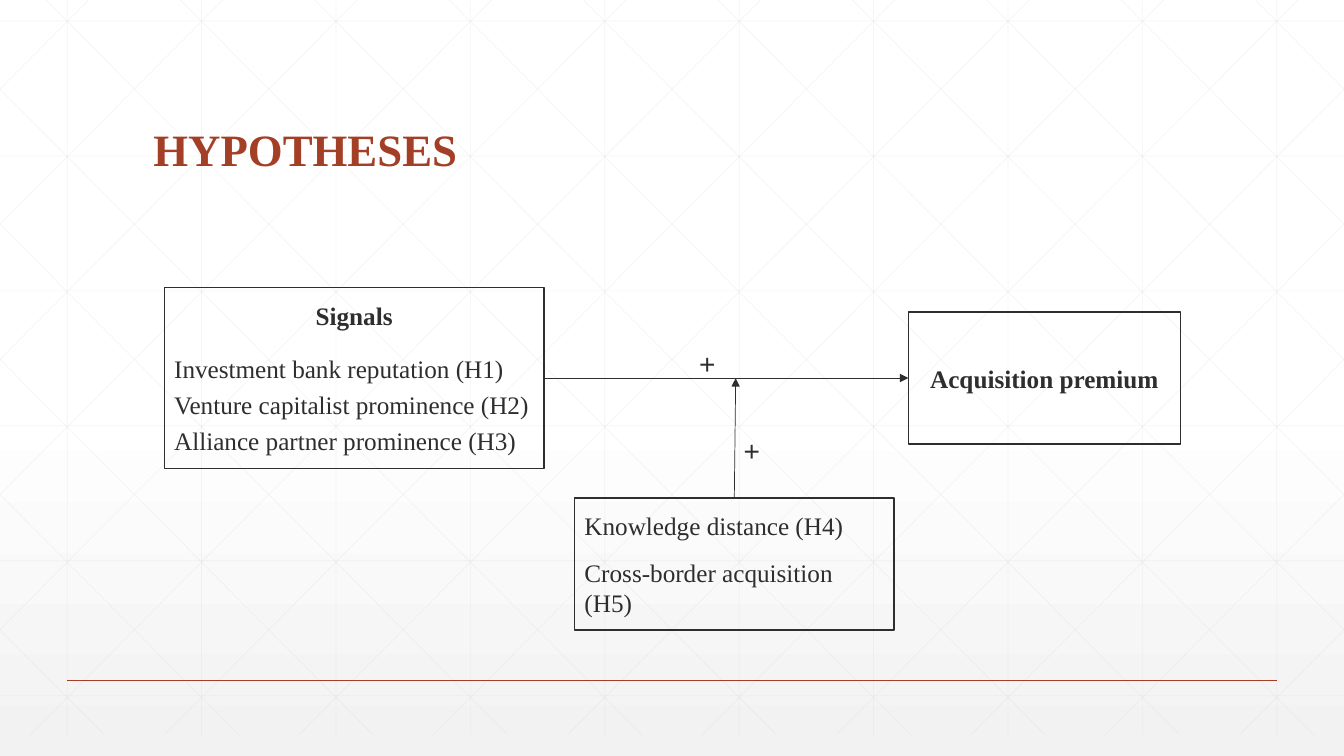
from copy import deepcopy

from lxml.etree import SubElement
from pptx import Presentation
from pptx.dml.color import RGBColor
from pptx.enum.shapes import MSO_CONNECTOR, MSO_SHAPE
from pptx.enum.text import MSO_ANCHOR, PP_ALIGN
from pptx.oxml.ns import qn
from pptx.util import Cm, Pt

INK = RGBColor(0x2D, 0x2E, 0x2D)
RUST = RGBColor(0xA4, 0x3F, 0x27)
GRID = RGBColor(0xD9, 0xD9, 0xD9)
WHITE = RGBColor(0xFF, 0xFF, 0xFF)
MIST = RGBColor(0xF2, 0xF2, 0xF2)

SERIF = "Times New Roman"
WIDTH, HEIGHT = 33.87, 19.05
PITCH = WIDTH / 10
GRID_TOP, GRID_BOTTOM = -0.53, 18.52
DIAGONAL_START, DIAGONAL_RUN = 0.63, 18.94


def set_background(slide):
    fill = slide.background.fill
    fill.gradient()
    fill.gradient_angle = 270
    stop_list = slide.element.find(".//" + qn("a:gsLst"))
    stop_list.insert(0, deepcopy(stop_list[0]))
    for stop, position, color in zip(fill.gradient_stops, (0, 0.53, 1), (WHITE, WHITE, MIST)):
        stop.position = position
        stop.color.rgb = color


def add_line(shapes, start, end, color, weight, alpha=None, arrow=False):
    line = shapes.add_connector(MSO_CONNECTOR.STRAIGHT, *map(Cm, start + end))
    line.line.color.rgb = color
    line.line.width = Pt(weight)
    properties = line.element.spPr
    SubElement(properties, qn("a:effectLst"))
    if alpha is not None:
        SubElement(properties.find(".//" + qn("a:srgbClr")), qn("a:alpha"), val=str(alpha * 1000))
    if arrow:
        SubElement(properties.find(qn("a:ln")), qn("a:tailEnd"), type="triangle")
    return line


def clipped_diagonal(top_x):
    """Ends of a falling grid line, cut at the slide's left and right edges."""
    slope = (GRID_BOTTOM - GRID_TOP) / DIAGONAL_RUN
    left, right = max(top_x, 0), min(top_x + DIAGONAL_RUN, WIDTH)
    return [(x, GRID_TOP + (x - top_x) * slope) for x in (left, right)]


def add_grid(slide):
    shapes = slide.shapes.add_group_shape().shapes
    columns = [PITCH * (i + 0.5) for i in range(10)]
    rows = [0.53 + 3.4 * i for i in range(6)]
    lines = [((x, GRID_TOP), (x, GRID_BOTTOM)) for x in columns]
    lines += [((0, y), (WIDTH, y)) for y in rows]
    falling = [clipped_diagonal(DIAGONAL_START + PITCH * i) for i in range(-5, 10)]
    lines += falling
    lines += [[(WIDTH - x, y) for x, y in ends] for ends in falling]
    for start, end in lines:
        add_line(shapes, start, end, GRID, 0.5, alpha=25)


def format_text(paragraph, size, color=INK, font=SERIF, bold=False):
    for run in paragraph.runs:
        run.font.name = font
        run.font.size = Pt(size)
        run.font.bold = bold
        run.font.color.rgb = color


def set_title(slide, text):
    title = slide.shapes.title
    title.left, title.top, title.width, title.height = map(Cm, (3.61, 1.4, 26.67, 3.18))
    frame = title.text_frame
    frame.text = text
    frame.vertical_anchor = MSO_ANCHOR.BOTTOM
    heading = frame.paragraphs[0]
    heading.alignment = PP_ALIGN.LEFT
    heading.line_spacing = 0.9
    format_text(heading, 32, RUST, bold=True)
    # The title belongs in front of the grid.
    title.element.getparent().append(title.element)


def add_box(slide, bounds, items, heading=None, spacing=1.0):
    box = slide.shapes.add_shape(MSO_SHAPE.RECTANGLE, *map(Cm, bounds))
    box.shadow.inherit = False
    box.fill.background()
    box.line.color.rgb = INK
    box.line.width = Pt(1)
    frame = box.text_frame
    frame.word_wrap = True
    frame.vertical_anchor = MSO_ANCHOR.MIDDLE
    frame.text = "\n".join(([heading] if heading else []) + items)
    for index, paragraph in enumerate(frame.paragraphs):
        is_heading = index == 0 and heading is not None
        paragraph.alignment = PP_ALIGN.CENTER if is_heading else PP_ALIGN.LEFT
        paragraph.line_spacing = 1.0 if is_heading else spacing
        format_text(paragraph, 18, bold=is_heading)
    if len(frame.paragraphs) > 1:
        frame.paragraphs[1].space_before = Pt(12)
    return box


def add_sign(slide, left, top):
    sign = slide.shapes.add_textbox(*map(Cm, (left, top, 1.42, 1.12)))
    sign.text_frame.word_wrap = True
    sign.text_frame.text = "+"
    format_text(sign.text_frame.paragraphs[0], 20, font="Arial")


def main():
    deck = Presentation()
    deck.slide_width, deck.slide_height = Cm(WIDTH), Cm(HEIGHT)
    slide = deck.slides.add_slide(deck.slide_layouts[5])

    set_background(slide)
    add_grid(slide)
    add_line(slide.shapes, (1.69, 17.15), (32.18, 17.15), RUST, 1)
    set_title(slide, "HYPOTHESES")

    signals = add_box(
        slide, (4.14, 7.24, 9.57, 4.57),
        ["Investment bank reputation (H1)",
         "Venture capitalist prominence (H2)",
         "Alliance partner prominence (H3)"],
        heading="Signals", spacing=1.2)
    premium = add_box(slide, (22.89, 7.86, 6.86, 3.33), [], heading="Acquisition premium")
    moderators = add_box(
        slide, (14.48, 12.55, 8.05, 3.33),
        ["Knowledge distance (H4)", "Cross-border acquisition (H5)"])

    main_effect = add_line(slide.shapes, (13.71, 9.53), (22.89, 9.53), INK, 0.5, arrow=True)
    main_effect.begin_connect(signals, 3)
    main_effect.end_connect(premium, 1)
    add_sign(slide, 17.37, 8.61)

    moderation = add_line(slide.shapes, (18.5, 12.55), (18.54, 9.53), INK, 0.5, arrow=True)
    moderation.begin_connect(moderators, 0)
    add_sign(slide, 18.49, 10.8)

    deck.save("out.pptx")


if __name__ == "__main__":
    main()
